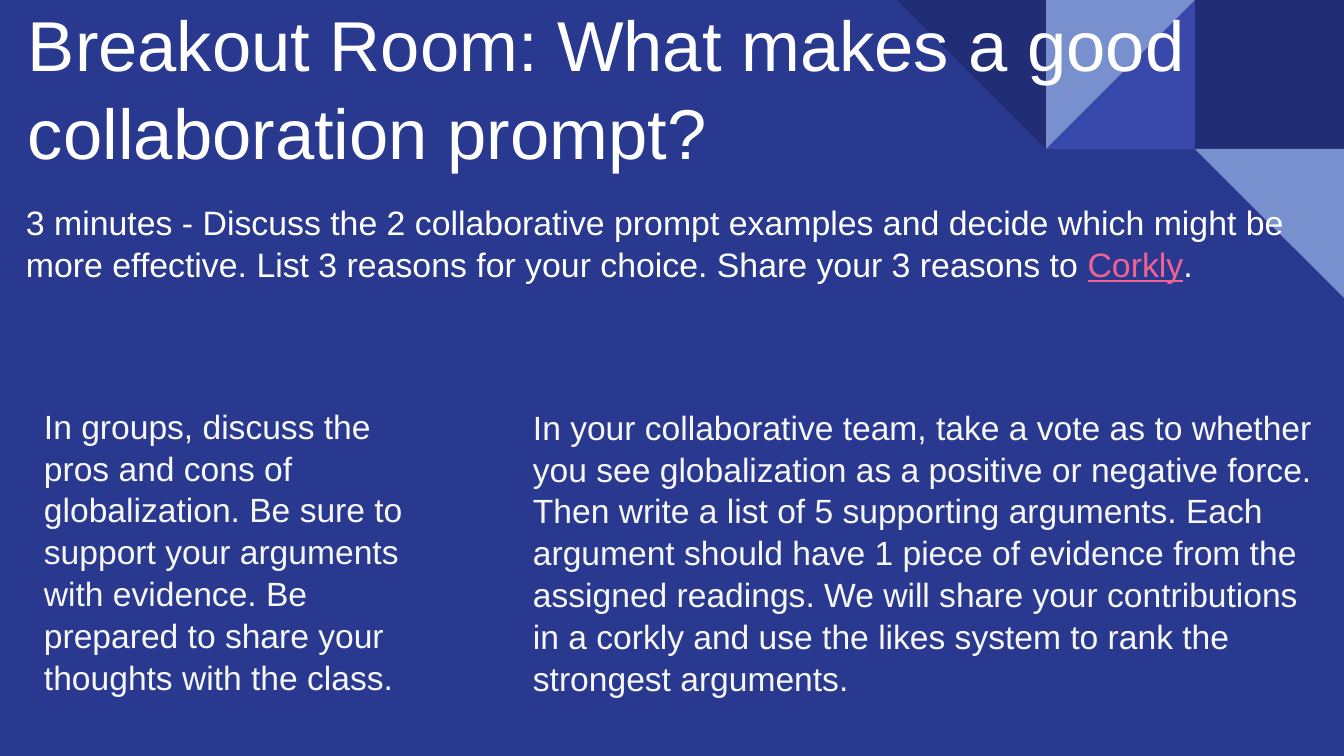
"""Build the breakout room slide comparing two collaboration prompts."""
from dataclasses import dataclass

from pptx import Presentation
from pptx import util as u
from pptx.dml.color import RGBColor
from pptx.enum import shapes, text

WIDTH, HEIGHT = 1344, 756
TILE = 149
INSET = 13


@dataclass(frozen=True)
class Theme:
    font: str = "Arial"
    background: str = "2A3990"
    navy: str = "212D74"
    indigo: str = "3949AB"
    sky: str = "7890CD"
    white: str = "FFFFFF"
    soft_white: str = "F7F7F7"
    link: str = "F06292"
    title_size: float = 37.8
    intro_size: float = 18.1
    prompt_size: float = 18
    spacing: float = 1.04


@dataclass(frozen=True)
class Box:
    left: int
    top: int
    width: int
    height: int


@dataclass(frozen=True)
class Tile:
    column: int
    row: int
    color: str
    rotation: int = 0
    kind: shapes.MSO_SHAPE = shapes.MSO_SHAPE.RIGHT_TRIANGLE


@dataclass(frozen=True)
class Prompt:
    box: Box
    wording: str


THEME = Theme()
TILES = [
    Tile(2, 0, THEME.navy, kind=shapes.MSO_SHAPE.RECTANGLE),
    Tile(1, 0, THEME.indigo, 270),
    Tile(1, 0, THEME.sky, 90),
    Tile(0, 0, THEME.navy, 180),
    Tile(2, 1, THEME.sky, 180),
]
PROMPTS = [
    Prompt(
        Box(31, 391, 407, 320),
        "In groups, discuss the pros and cons of globalization. Be sure to support "
        "your arguments with evidence. Be prepared to share your thoughts with the class.",
    ),
    Prompt(
        Box(520, 392, 810, 313),
        "In your collaborative team, take a vote as to whether you see globalization "
        "as a positive or negative force. Then write a list of 5 supporting arguments. "
        "Each argument should have 1 piece of evidence from the assigned readings. We "
        "will share your contributions in a corkly and use the likes system to rank "
        "the strongest arguments.",
    ),
]


def px(length: int) -> int:
    """Turn slide pixels into EMU."""
    return round(length * u.Inches(10) / WIDTH)


def rgb(color: str) -> RGBColor:
    """Turn a hex string into a colour."""
    return RGBColor.from_string(color)


def place(shape, box: Box) -> None:
    """Move and size a shape."""
    shape.left, shape.top = px(box.left), px(box.top)
    shape.width, shape.height = px(box.width), px(box.height)


def write(shape, runs: list[str], size: float, color: str, anchor=text.MSO_ANCHOR.TOP):
    """Write one left-aligned paragraph and return it."""
    frame = shape.text_frame
    frame.word_wrap = True
    frame.auto_size = text.MSO_AUTO_SIZE.NONE
    frame.vertical_anchor = anchor
    frame.margin_left = frame.margin_right = px(INSET)
    frame.margin_top = frame.margin_bottom = px(INSET)
    paragraph = frame.paragraphs[0]
    paragraph.alignment = text.PP_ALIGN.LEFT
    paragraph.line_spacing = THEME.spacing
    paragraph.font.name = THEME.font
    paragraph.font.size = u.Pt(size)
    paragraph.font.color.rgb = rgb(color)
    for wording in runs:
        paragraph.add_run().text = wording
    return paragraph


def draw_tile(slide, tile: Tile) -> None:
    """Draw one piece of the corner mosaic."""
    left = WIDTH - (3 - tile.column) * TILE
    piece = slide.shapes.add_shape(
        tile.kind, px(left), px(tile.row * TILE), px(TILE), px(TILE)
    )
    piece.rotation = tile.rotation
    piece.shadow.inherit = False
    piece.fill.solid()
    piece.fill.fore_color.rgb = rgb(tile.color)
    piece.line.fill.background()


def draw_prompt(slide, prompt: Prompt) -> None:
    """Draw one prompt example."""
    panel = slide.shapes.add_shape(shapes.MSO_SHAPE.RECTANGLE, 0, 0, 0, 0)
    place(panel, prompt.box)
    panel.shadow.inherit = False
    panel.fill.background()
    panel.line.color.rgb = rgb(THEME.background)
    panel.line.width = u.Pt(0.75)
    write(panel, [prompt.wording], THEME.prompt_size, THEME.soft_white)


def draw_intro(slide) -> None:
    """Draw the instructions with the marked board name."""
    intro = slide.shapes.add_textbox(0, 0, 0, 0)
    place(intro, Box(13, 187, 1317, 63))
    instructions = (
        "3 minutes - Discuss the 2 collaborative prompt examples and decide which "
        "might be more effective. List 3 reasons for your choice. Share your 3 reasons to "
    )
    paragraph = write(
        intro, [instructions, "Corkly", "."], THEME.intro_size, THEME.white
    )
    board = paragraph.runs[1]
    board.font.color.rgb = rgb(THEME.link)
    board.font.underline = True


def main() -> None:
    """Build and save the slide."""
    deck = Presentation()
    deck.slide_width, deck.slide_height = px(WIDTH), px(HEIGHT)
    slide = deck.slides.add_slide(deck.slide_layouts[5])
    slide.background.fill.solid()
    slide.background.fill.fore_color.rgb = rgb(THEME.background)
    for tile in TILES:
        draw_tile(slide, tile)

    title = slide.shapes.title
    slide.shapes._spTree.append(title._element)
    place(title, Box(15, 63, 1289, 124))
    question = "Breakout Room: What makes a good collaboration prompt?"
    write(title, [question], THEME.title_size, THEME.white, text.MSO_ANCHOR.BOTTOM)

    draw_intro(slide)
    for prompt in PROMPTS:
        draw_prompt(slide, prompt)
    deck.save("out.pptx")


if __name__ == "__main__":
    main()
